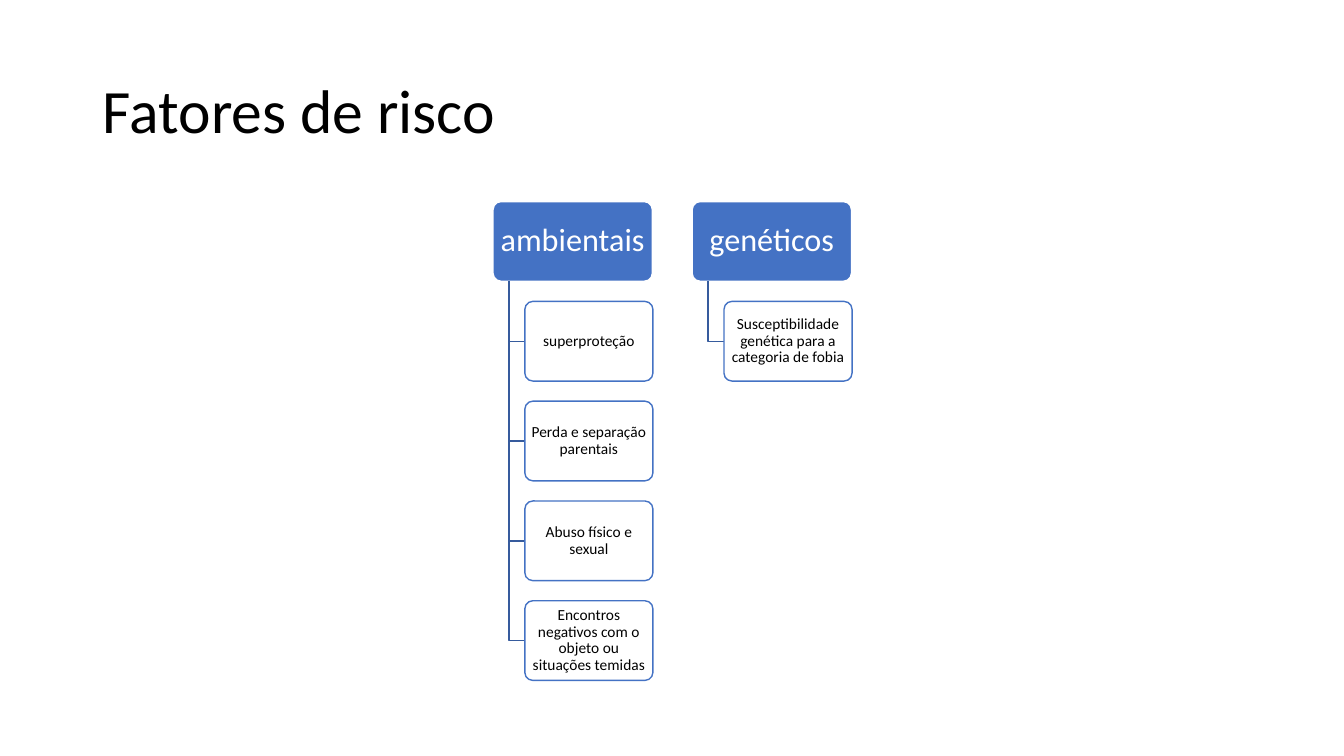
from lxml import etree
from pptx import Presentation, util as u
from pptx.dml.color import RGBColor
from pptx.enum import shapes, text
from pptx.oxml.ns import qn

TITLE = "Fatores de risco"
FACTORS = [
    ("ambientais", ["superproteção", "Perda e separação parentais",
                    "Abuso físico e sexual",
                    "Encontros negativos com o objeto ou situações temidas"]),
    ("genéticos", ["Susceptibilidade genética para a categoria de fobia"]),
]
FONT = "Calibri"
BLUE, DARK_BLUE, WHITE, BLACK = "4472C4", "365B9D", "FFFFFF", "000000"

LEFT, TOP = 4.89, 2.0
HEAD_W, CHILD_W, BOX_H = 1.58, 1.27, 0.79
COL_STEP, ROW_STEP = HEAD_W * 1.25, 0.99
STEM = HEAD_W / 10
INDENT = STEM * 2


def rgb(value):
    return RGBColor.from_string(value)


def format_text(tf, size, color, align):
    tf.word_wrap = True
    tf.vertical_anchor = text.MSO_ANCHOR.MIDDLE
    p = tf.paragraphs[0]
    p.alignment = align
    p.line_spacing = 0.9
    for r in p.runs:
        r.font.name = FONT
        r.font.size = u.Pt(size)
        r.font.color.rgb = rgb(color)


def add_box(s, label, x, y, w, fill, line, size, color, inset):
    sp = s.shapes.add_shape(shapes.MSO_SHAPE.ROUNDED_RECTANGLE,
                            u.Inches(x), u.Inches(y), u.Inches(w), u.Inches(BOX_H))
    sp.adjustments[0] = 0.1
    sp.shadow.inherit = False
    sp.fill.solid()
    sp.fill.fore_color.rgb = rgb(fill)
    sp.line.color.rgb = rgb(line)
    sp.line.width = u.Pt(1)
    tf = sp.text_frame
    tf.text = label
    tf.margin_left = tf.margin_right = u.Inches(inset)
    tf.margin_top = tf.margin_bottom = u.Inches(0.04)
    format_text(tf, size, color, text.PP_ALIGN.CENTER)
    return sp


def add_branch(s, x, top, bottom):
    points = [(u.Inches(px), u.Inches(py))
              for px, py in [(x, top), (x, bottom), (x + STEM, bottom)]]
    builder = s.shapes.build_freeform(*points[0])
    builder.add_line_segments(points[1:], close=False)
    sp = builder.convert_to_shape()
    sp.shadow.inherit = False
    sp.fill.background()
    sp.line.color.rgb = rgb(DARK_BLUE)
    sp.line.width = u.Pt(1)


def main():
    prs = Presentation()
    prs.slide_width, prs.slide_height = u.Inches(13.33), u.Inches(7.5)
    s = prs.slides.add_slide(prs.slide_layouts[5])

    title = s.shapes.title
    title.left, title.top = u.Inches(0.92), u.Inches(0.4)
    title.width, title.height = u.Inches(11.5), u.Inches(1.45)
    title.text_frame.text = TITLE
    format_text(title.text_frame, 44, BLACK, text.PP_ALIGN.LEFT)

    for col, (head, children) in enumerate(FACTORS):
        x = LEFT + col * COL_STEP
        add_box(s, head, x, TOP, HEAD_W, BLUE, WHITE, 23, WHITE, 0.02)
        for row, child in enumerate(children, 1):
            y = TOP + row * ROW_STEP
            add_branch(s, x + STEM, TOP + BOX_H, y + BOX_H / 2)
            sp = add_box(s, child, x + INDENT, y, CHILD_W, WHITE, BLUE, 11, BLACK, 0.04)
            color = sp.element.spPr.find(qn("a:solidFill"))[0]
            etree.SubElement(color, qn("a:alpha"), val="90000")

    prs.save("out.pptx")


if __name__ == "__main__":
    main()
